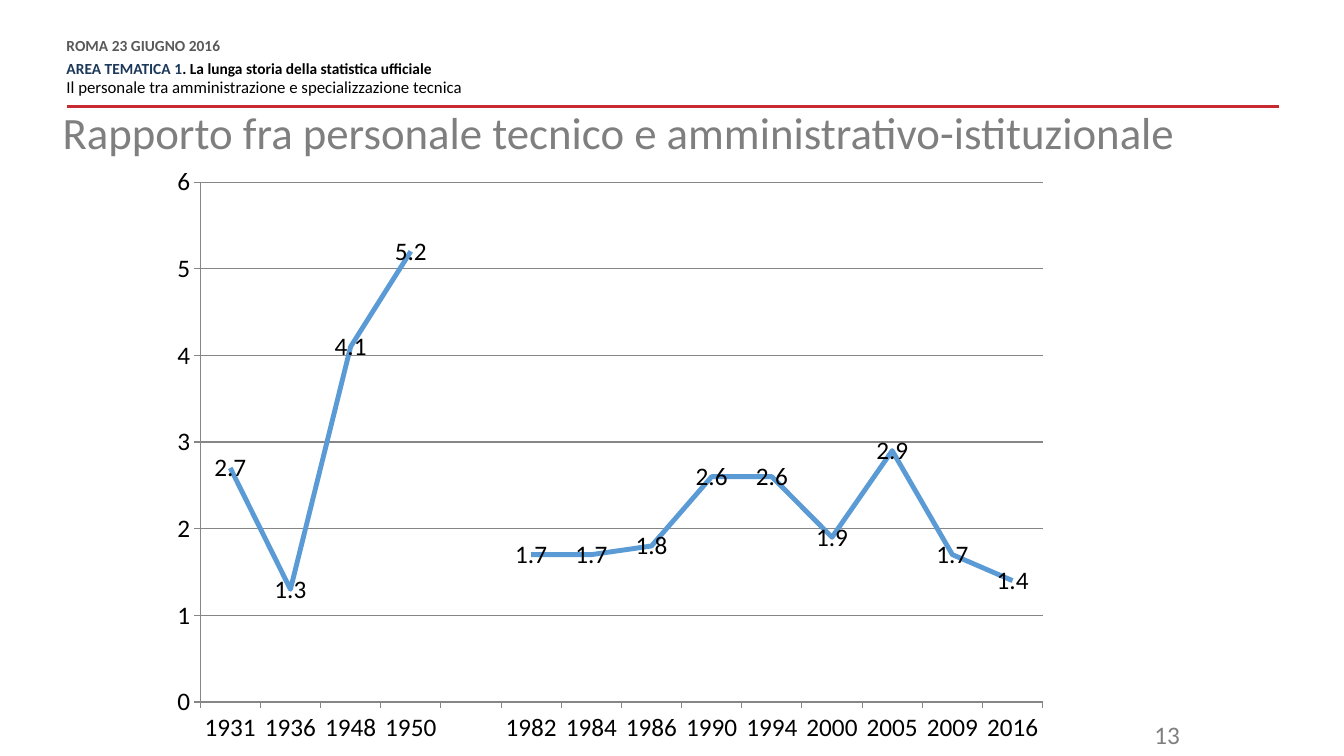
from dataclasses import dataclass

from lxml import etree
from pptx import Presentation
from pptx.chart.data import CategoryChartData
from pptx.dml.color import RGBColor
from pptx.enum.chart import XL_CHART_TYPE, XL_LABEL_POSITION, XL_MARKER_STYLE, XL_TICK_MARK
from pptx.enum.shapes import MSO_CONNECTOR
from pptx.enum.text import MSO_ANCHOR, PP_ALIGN
from pptx.oxml import parse_xml
from pptx.oxml.ns import nsdecls, qn
from pptx.util import Inches, Pt

LINE_CHART = XL_CHART_TYPE.LINE
LABEL_CENTER = XL_LABEL_POSITION.CENTER
NO_MARKER = XL_MARKER_STYLE.NONE
TICK_OUTSIDE, TICK_NONE = XL_TICK_MARK.OUTSIDE, XL_TICK_MARK.NONE
STRAIGHT = MSO_CONNECTOR.STRAIGHT
MIDDLE, TOP = MSO_ANCHOR.MIDDLE, MSO_ANCHOR.TOP
LEFT, RIGHT = PP_ALIGN.LEFT, PP_ALIGN.RIGHT


@dataclass(frozen=True)
class Theme:
    font: str = "Calibri"
    black: RGBColor = RGBColor.from_string("000000")
    dark_gray: RGBColor = RGBColor.from_string("595959")
    gray: RGBColor = RGBColor.from_string("7F7F7F")
    axis_gray: RGBColor = RGBColor.from_string("868686")
    navy: RGBColor = RGBColor.from_string("1C385A")
    red: RGBColor = RGBColor.from_string("C72A31")
    blue: RGBColor = RGBColor.from_string("5B9BD5")
    header_size: Pt = Pt(11)
    subject_size: Pt = Pt(12)
    title_size: Pt = Pt(32)
    chart_size: Pt = Pt(18)
    number_size: Pt = Pt(18)
    rule_width: Pt = Pt(2)
    series_width: Pt = Pt(3.5)
    axis_width: Pt = Pt(0.75)


THEME = Theme()
RATIOS = {
    "1931": 2.7, "1936": 1.3, "1948": 4.1, "1950": 5.2, "": None,
    "1982": 1.7, "1984": 1.7, "1986": 1.8, "1990": 2.6, "1994": 2.6,
    "2000": 1.9, "2005": 2.9, "2009": 1.7, "2016": 1.4,
}


def set_attributes(target, values):
    for name, value in values.items():
        setattr(target, name, value)


def add_text(slide, box, paragraphs, inset=(0, 0), anchor=TOP):
    """Each paragraph is (format values, runs); each run is (text, size, colour, bold)."""
    frame = slide.shapes.add_textbox(*map(Inches, box)).text_frame
    across, down = map(Inches, inset)
    set_attributes(frame, {
        "word_wrap": True, "vertical_anchor": anchor,
        "margin_left": across, "margin_right": across,
        "margin_top": down, "margin_bottom": down,
    })
    for index, (layout, runs) in enumerate(paragraphs):
        paragraph = frame.add_paragraph() if index else frame.paragraphs[0]
        set_attributes(paragraph, layout)
        for text, size, color, bold in runs:
            run = paragraph.add_run()
            run.text = text
            set_attributes(run.font, {"name": THEME.font, "size": size, "bold": bold})
            run.font.color.rgb = color


def add_header(slide, box):
    left, top, width, height = box
    size, spacing = THEME.header_size, Pt(10.8)
    add_text(slide, (left, top, 8.34, 0.59), [
        ({"line_spacing": spacing, "space_after": Pt(6)},
         [("ROMA 23 GIUGNO 2016", size, THEME.dark_gray, True)]),
        ({"line_spacing": spacing},
         [("AREA TEMATICA 1", size, THEME.navy, True),
          (". La lunga storia della statistica ufficiale", size, THEME.black, True)]),
        ({"line_spacing": spacing, "space_before": Pt(3), "space_after": Pt(6)},
         [("Il personale tra amministrazione e specializzazione tecnica",
           THEME.subject_size, THEME.black, False)]),
    ])
    bottom = Inches(top + height)
    rule = slide.shapes.add_connector(
        STRAIGHT, Inches(left + width), bottom, Inches(left), bottom)
    rule.line.color.rgb = THEME.red
    rule.line.width = THEME.rule_width
    etree.SubElement(rule._element.spPr, qn("a:effectLst"))


def add_title(slide, box):
    text = "Rapporto fra personale tecnico e amministrativo-istituzionale"
    add_text(slide, box, [
        ({"line_spacing": 0.9, "alignment": LEFT},
         [(text, THEME.title_size, THEME.gray, False)]),
    ], anchor=MIDDLE)


def add_page_number(slide, box):
    add_text(slide, box, [
        ({"alignment": RIGHT}, [("13", THEME.number_size, THEME.gray, False)]),
    ], inset=(0.1, 0.05))


def set_plot_layout(chart, fractions):
    """Fix the inner plot area as left, top, width, height fractions of the chart."""
    plot_area = chart._chartSpace.chart.plotArea
    for layout in plot_area.findall(qn("c:layout")):
        plot_area.remove(layout)
    values = "".join(
        f'<c:{name} val="{value}"/>' for name, value in zip("xywh", fractions))
    plot_area.insert(0, parse_xml(
        f'<c:layout {nsdecls("c")}><c:manualLayout><c:layoutTarget val="inner"/>'
        f'<c:xMode val="edge"/><c:yMode val="edge"/>{values}'
        "</c:manualLayout></c:layout>"))


def add_ratio_chart(slide, box):
    data = CategoryChartData(number_format="0.0")
    data.categories = list(RATIOS)
    data.add_series("Series 1", list(RATIOS.values()))
    chart = slide.shapes.add_chart(LINE_CHART, *map(Inches, box), data).chart
    set_attributes(chart, {"has_legend": False, "has_title": False})
    set_attributes(chart.font, {"name": THEME.font, "size": THEME.chart_size})
    chart.font.color.rgb = THEME.black
    set_plot_layout(chart, (0.04, 0.05, 0.94, 0.87))

    set_attributes(chart.value_axis, {
        "minimum_scale": 0, "maximum_scale": 6, "major_unit": 1,
        "has_major_gridlines": True})
    set_attributes(chart.value_axis.tick_labels, {
        "number_format": "0", "number_format_is_linked": False})
    for axis in (chart.category_axis, chart.value_axis):
        set_attributes(axis, {
            "major_tick_mark": TICK_OUTSIDE, "minor_tick_mark": TICK_NONE})
    for part in (chart.category_axis, chart.value_axis, chart.value_axis.major_gridlines):
        part.format.line.color.rgb = THEME.axis_gray
        part.format.line.width = THEME.axis_width

    plot = chart.plots[0]
    set_attributes(plot, {"vary_by_categories": False, "has_data_labels": True})
    set_attributes(plot.data_labels, {
        "show_value": True, "position": LABEL_CENTER,
        "number_format": "0.0", "number_format_is_linked": False})
    series = plot.series[0]
    series.smooth = False
    series.marker.style = NO_MARKER
    series.format.line.color.rgb = THEME.blue
    series.format.line.width = THEME.series_width


def main():
    presentation = Presentation()
    presentation.slide_width = Inches(13.33)
    presentation.slide_height = Inches(7.5)
    slide = presentation.slides.add_slide(presentation.slide_layouts[6])
    add_header(slide, (0.66, 0.39, 12.03, 0.67))
    add_title(slide, (0.62, 1.05, 12.11, 0.57))
    add_page_number(slide, (8.8, 7.09, 3, 0.4))
    add_ratio_chart(slide, (1.63, 1.51, 8.89, 5.93))
    presentation.save("out.pptx")


if __name__ == "__main__":
    main()
